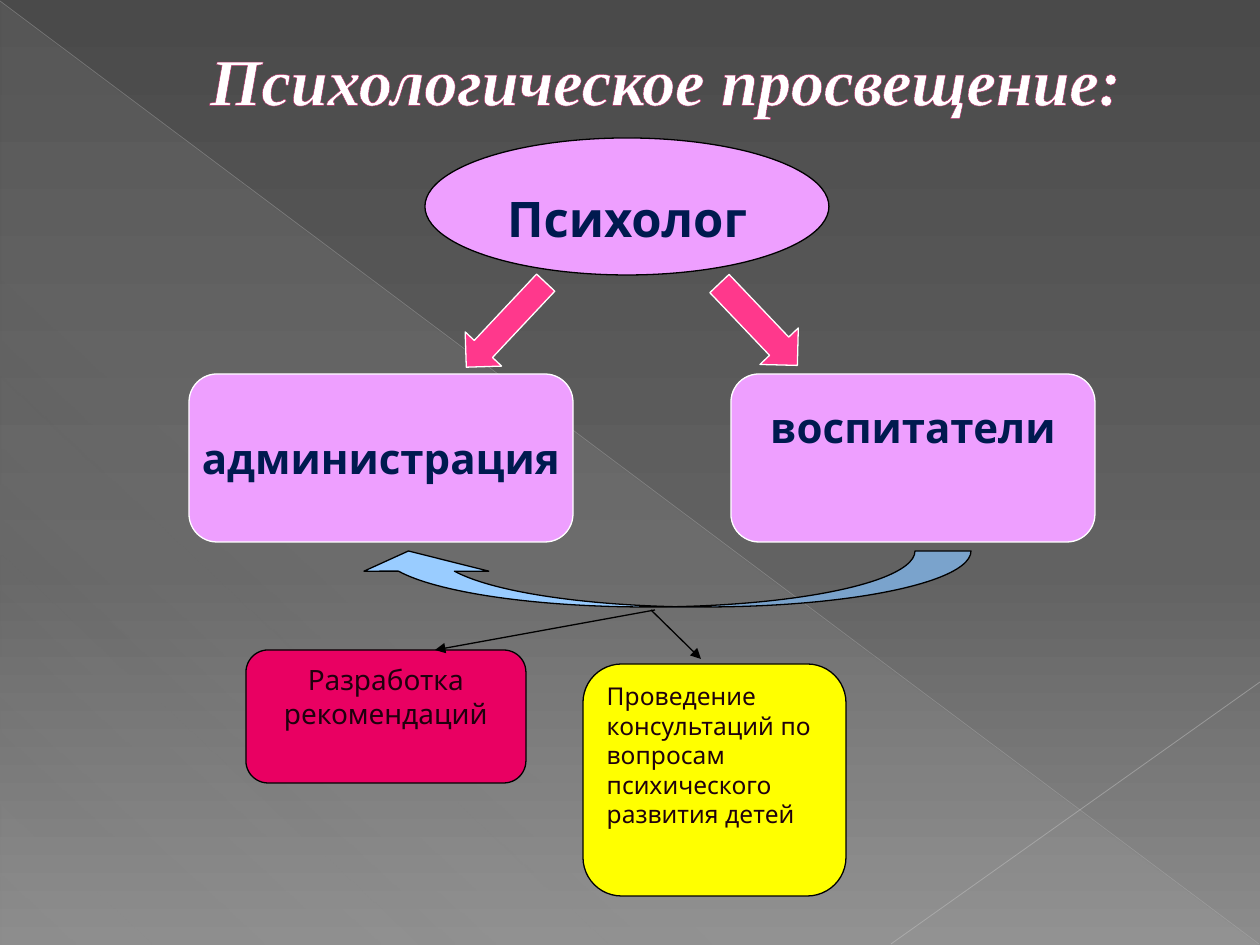
from lxml.etree import SubElement
from pptx import Presentation
from pptx.dml.color import RGBColor
from pptx.enum.shapes import MSO_CONNECTOR, MSO_SHAPE
from pptx.enum.text import MSO_ANCHOR, PP_ALIGN
from pptx.oxml.ns import qn
from pptx.util import Emu, Pt

PIXELS_PER_INCH = 126

WHITE = RGBColor(0xFF, 0xFF, 0xFF)
BLACK = RGBColor(0x00, 0x00, 0x00)
LILAC = RGBColor(0xEE, 0x9F, 0xFF)
PINK = RGBColor(0xFF, 0x38, 0x8C)
CRIMSON = RGBColor(0xE9, 0x00, 0x62)
YELLOW = RGBColor(0xFF, 0xFF, 0x00)
SKY_BLUE = RGBColor(0x99, 0xCC, 0xFF)
NAVY = RGBColor(0x00, 0x1A, 0x4F)
DARK_RED = RGBColor(0x1F, 0x00, 0x0D)
TITLE_OUTLINE = RGBColor(0xB1, 0x27, 0x61)
GRAY_DARK = RGBColor(0x4A, 0x4A, 0x4A)
GRAY_MIDDLE = RGBColor(0x62, 0x62, 0x62)
GRAY_LIGHT = RGBColor(0x8C, 0x8C, 0x8C)
GRAY_VEIL = RGBColor(0xD2, 0xD2, 0xD2)
GRAY_DIAGONAL = RGBColor(0xBF, 0xBF, 0xBF)
GRAY_CORNER = RGBColor(0xC6, 0xC6, 0xC6)


def px(length):
    return Emu(round(length * 914400 / PIXELS_PER_INCH))


def set_alpha(color_element, percent):
    SubElement(color_element, qn("a:alpha"), val=str(percent * 1000))


def set_gradient(fill, stops, angle):
    """Fill with (position, color, opacity) stops; the angle runs clockwise."""
    fill.gradient()
    fill.gradient_angle = 360 - angle
    stop_list = fill.gradient_stops[0]._gs.getparent()
    for old_stop in list(stop_list):
        stop_list.remove(old_stop)
    for position, color, opacity in stops:
        stop = SubElement(stop_list, qn("a:gs"), pos=str(position * 1000))
        color_element = SubElement(stop, qn("a:srgbClr"), val=str(color))
        if opacity < 100:
            set_alpha(color_element, opacity)


def add_shape(slide, kind, box, fill, line=BLACK, rotation=0):
    shape = slide.shapes.add_shape(kind, *map(px, box))
    shape.shadow.inherit = False
    shape.rotation = rotation
    shape.fill.solid()
    shape.fill.fore_color.rgb = fill
    shape.line.color.rgb = line
    shape.line.width = Pt(0.75)
    return shape


def add_line(slide, start, end, color=BLACK, width=0.75, opacity=100, arrow=False):
    connector = slide.shapes.add_connector(
        MSO_CONNECTOR.STRAIGHT, *map(px, start + end))
    connector.line.color.rgb = color
    connector.line.width = Pt(width)
    line_element = connector.line._get_or_add_ln()
    if opacity < 100:
        set_alpha(line_element.find(".//" + qn("a:srgbClr")), opacity)
    if arrow:
        SubElement(line_element, qn("a:tailEnd"), type="triangle")
    SubElement(connector._element.spPr, qn("a:effectLst"))


def add_text(shape, text, size, font, color, bold=False,
             align=PP_ALIGN.CENTER, anchor=MSO_ANCHOR.TOP, wrap=True):
    frame = shape.text_frame
    frame.word_wrap = wrap
    frame.vertical_anchor = anchor
    paragraph = frame.paragraphs[0]
    paragraph.alignment = align
    run = paragraph.add_run()
    run.text = text
    run.font.size = Pt(size)
    run.font.name = font
    run.font.bold = bold
    run.font.color.rgb = color
    return run


def add_backdrop(slide):
    set_gradient(slide.background.fill, [
        (0, GRAY_DARK, 100), (60, GRAY_MIDDLE, 100), (100, GRAY_LIGHT, 100)], 90)
    triangle = add_shape(
        slide, MSO_SHAPE.RIGHT_TRIANGLE, (1, 2, 1258, 943), GRAY_VEIL)
    triangle.line.fill.background()
    set_gradient(triangle.fill, [
        (0, GRAY_VEIL, 10), (70, GRAY_VEIL, 8), (100, GRAY_VEIL, 1)], 133)
    add_line(slide, (0, 1), (1259, 944), GRAY_DIAGONAL, 0.39, 35)
    add_line(slide, (1260, 682), (891, 944), GRAY_CORNER, 0.47, 45)


def add_title(slide, text):
    title = slide.shapes.add_textbox(*map(px, (130, 0, 1071, 158)))
    title.text_frame.margin_left = px(80)
    run = add_text(title, text, 37.8, "Times New Roman", WHITE, bold=True,
                   align=PP_ALIGN.LEFT, anchor=MSO_ANCHOR.MIDDLE)
    run.font.italic = True
    properties = run.font._element
    outline = SubElement(properties, qn("a:ln"), w=str(Pt(0.5)))
    outline_fill = SubElement(outline, qn("a:solidFill"))
    SubElement(outline_fill, qn("a:srgbClr"), val=str(TITLE_OUTLINE))
    properties.insert(0, outline)


def add_audience(slide, text, left, width, anchor, top_margin=0):
    box = add_shape(slide, MSO_SHAPE.ROUNDED_RECTANGLE,
                    (left, 374, width, 168), LILAC, WHITE)
    frame = box.text_frame
    frame.margin_left = frame.margin_right = frame.margin_bottom = 0
    frame.margin_top = px(top_margin)
    add_text(box, text, 24, "Comic Neue", NAVY, bold=True,
             anchor=anchor, wrap=False)


def add_task(slide, text, box, fill, size, align):
    task = add_shape(slide, MSO_SHAPE.FLOWCHART_ALTERNATE_PROCESS, box, fill)
    add_text(task, text, size, "Quicksand", DARK_RED, align=align)


def add_psychologist(slide):
    ellipse = add_shape(slide, MSO_SHAPE.OVAL, (425, 138, 404, 137), LILAC)
    ellipse.text_frame.margin_top = px(30)
    add_text(ellipse, "Психолог", 28, "Quicksand", NAVY, bold=True)


def add_return_arrow(slide):
    arrow = add_shape(slide, MSO_SHAPE.CURVED_DOWN_ARROW,
                      (346, 551, 625, 56), SKY_BLUE, rotation=180)
    for index, value in enumerate((1.11, 2.23, 0.36)):
        arrow.adjustments[index] = value


def main():
    presentation = Presentation()
    presentation.slide_width = px(1260)
    presentation.slide_height = px(945)
    slide = presentation.slides.add_slide(presentation.slide_layouts[6])

    add_backdrop(slide)
    add_title(slide, "Психологическое просвещение:")
    add_audience(slide, "администрация", 189, 384, MSO_ANCHOR.MIDDLE)
    add_audience(slide, "воспитатели", 731, 364, MSO_ANCHOR.TOP, 19)
    for box, rotation in (((481, 267, 50, 116), 43.2),
                          ((732, 268, 53, 113), 316.4)):
        add_shape(slide, MSO_SHAPE.DOWN_ARROW, box, PINK, WHITE, rotation)
    add_psychologist(slide)
    add_return_arrow(slide)
    add_task(slide, "Разработка рекомендаций", (246, 650, 280, 133),
             CRIMSON, 16, PP_ALIGN.CENTER)
    add_task(slide, "Проведение консультаций по вопросам психического развития детей",
             (583, 664, 263, 232), YELLOW, 14, PP_ALIGN.LEFT)
    add_line(slide, (655, 610), (435, 650), arrow=True)
    add_line(slide, (651, 610), (701, 659), arrow=True)

    presentation.save("out.pptx")


if __name__ == "__main__":
    main()
